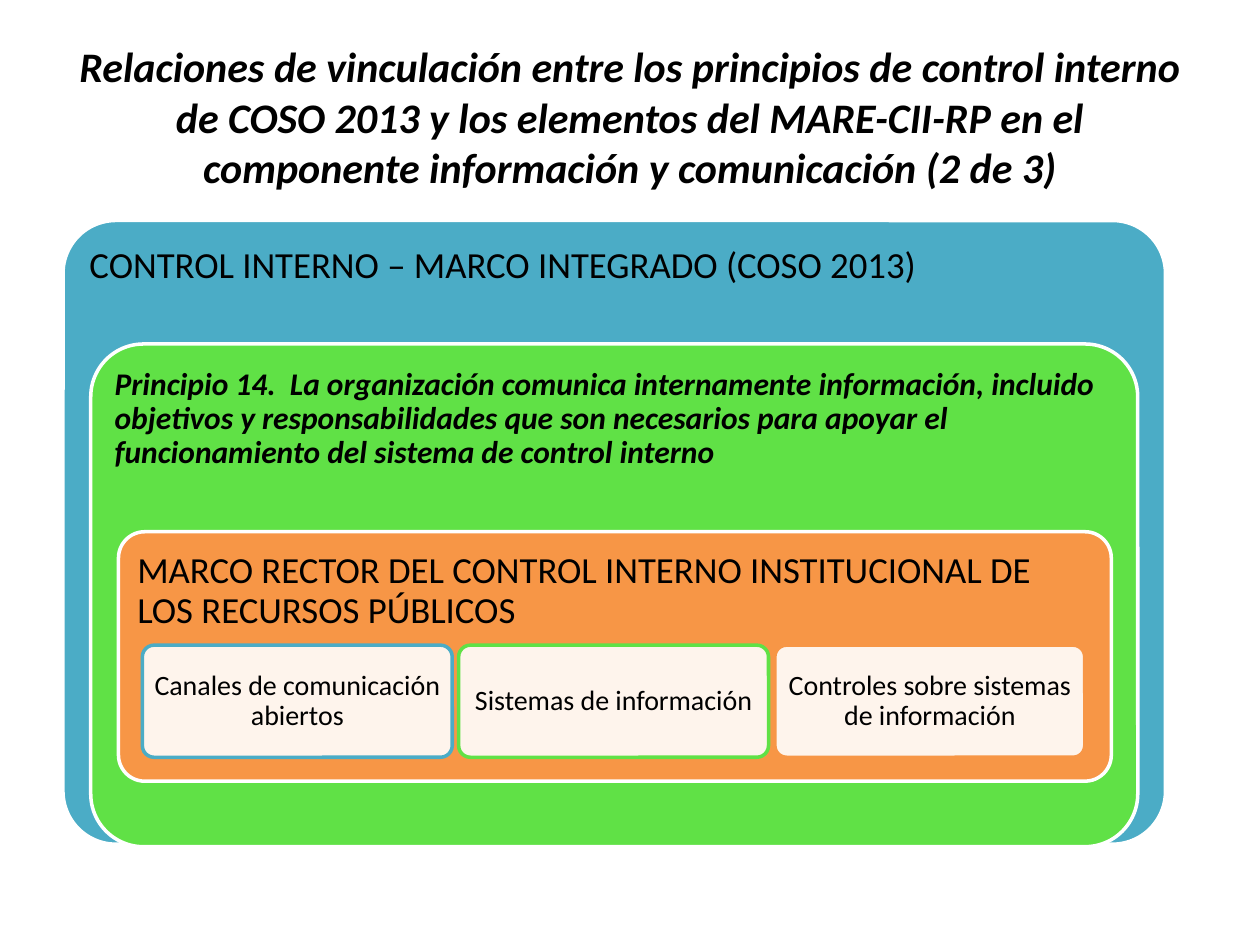
from lxml import etree
from pptx import Presentation
from pptx import util as u
from pptx.dml.color import RGBColor
from pptx.enum import shapes, text
from pptx.oxml.ns import qn

COLORS = {
    "ink": "000000",
    "white": "FFFFFF",
    "coso": "4BACC6",
    "principle": "60E146",
    "framework": "F79646",
}
FRAMEWORK_ELEMENTS = [
    ("Canales de comunicación abiertos", "coso"),
    ("Sistemas de información", "principle"),
    ("Controles sobre sistemas de información", "framework"),
]


def rgb(name):
    """Return the named colour."""
    return RGBColor.from_string(COLORS[name])


def add_panel(slide, box, corner, fill, outline="white", opacity=100):
    """Draw a rounded panel with an outline and optional transparency."""
    panel = slide.shapes.add_shape(
        shapes.MSO_SHAPE.ROUNDED_RECTANGLE, *map(u.Inches, box))
    panel.adjustments[0] = corner
    panel.shadow.inherit = False
    panel.fill.solid()
    panel.fill.fore_color.rgb = rgb(fill)
    panel.line.color.rgb = rgb(outline)
    panel.line.width = u.Pt(2)
    if opacity < 100:
        color = panel.fill._xPr.find(qn("a:solidFill"))[0]
        etree.SubElement(color, qn("a:alpha"), val=str(opacity * 1000))


def add_label(slide, box, wording, size, inset, centered=False,
              emphasis=False, spacing=0.9):
    """Write one paragraph in a wrapped text box."""
    label = slide.shapes.add_textbox(*map(u.Inches, box))
    frame = label.text_frame
    frame.word_wrap = True
    frame.margin_left = frame.margin_right = u.Inches(inset)
    frame.margin_top = frame.margin_bottom = u.Inches(inset)
    frame.vertical_anchor = (
        text.MSO_ANCHOR.MIDDLE if centered else text.MSO_ANCHOR.TOP)
    paragraph = frame.paragraphs[0]
    paragraph.text = wording
    paragraph.alignment = (
        text.PP_ALIGN.CENTER if centered else text.PP_ALIGN.LEFT)
    paragraph.line_spacing = spacing
    font = paragraph.font
    font.name = "Calibri"
    font.size = u.Pt(size)
    font.bold = font.italic = emphasis
    font.color.rgb = rgb("ink")


def add_element_cards(slide):
    """Lay out the framework elements as a row of equal cards."""
    left, top, width, height, pitch, pad = 1.13, 5.12, 2.46, 0.89, 2.51, 0.025
    for index, (wording, outline) in enumerate(FRAMEWORK_ELEMENTS):
        x = left + index * pitch
        add_panel(slide, (x, top, width, height), 0.105, "white", outline, 90)
        add_label(slide, (x + pad, top + pad, width - 2 * pad, height - 2 * pad),
                  wording, 16, 0.07, centered=True)


def main():
    """Build the slide of nested control frameworks."""
    deck = Presentation()
    deck.slide_width, deck.slide_height = u.Inches(10), u.Inches(7.5)
    slide = deck.slides.add_slide(deck.slide_layouts[6])

    add_label(slide, (0.5, 0.3, 9, 1.25),
              "Relaciones de vinculación entre los principios de control interno "
              "de COSO 2013 y los elementos del MARE-CII-RP en el componente "
              "información y comunicación (2 de 3)",
              24, 0.1, centered=True, emphasis=True, spacing=1.0)

    add_panel(slide, (0.5, 1.75, 8.75, 4.95), 0.085, "coso")
    add_label(slide, (0.62, 1.87, 8.51, 4.7),
              "CONTROL INTERNO – MARCO INTEGRADO (COSO 2013)", 21, 0.09)

    add_panel(slide, (0.72, 2.73, 8.31, 3.99), 0.105, "principle")
    add_label(slide, (0.84, 2.85, 8.07, 3.74),
              "Principio 14.  La organización comunica internamente información, "
              "incluido objetivos y responsabilidades que son necesarios para "
              "apoyar el funcionamiento del sistema de control interno",
              18, 0.07, emphasis=True)

    add_panel(slide, (0.94, 4.22, 7.88, 1.98), 0.105, "framework")
    add_label(slide, (1, 4.29, 7.76, 1.86),
              "MARCO RECTOR DEL CONTROL INTERNO INSTITUCIONAL DE "
              "LOS RECURSOS PÚBLICOS", 21, 0.09)

    add_element_cards(slide)
    deck.save("out.pptx")


if __name__ == "__main__":
    main()
